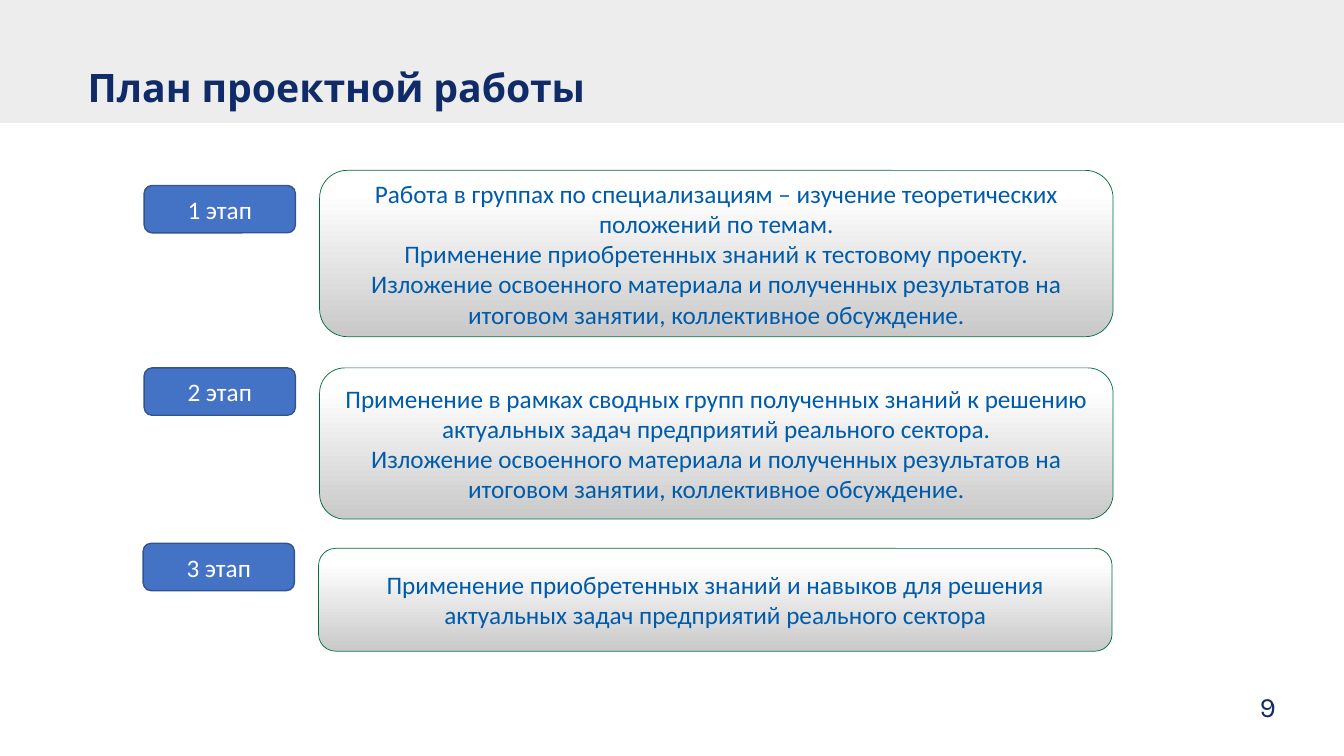
from pptx import Presentation
from pptx.dml.color import RGBColor
from pptx.enum.shapes import MSO_SHAPE
from pptx.enum.text import MSO_ANCHOR, PP_ALIGN
from pptx.util import Inches, Pt

RECT = MSO_SHAPE.RECTANGLE
ROUND = MSO_SHAPE.ROUNDED_RECTANGLE
MIDDLE = MSO_ANCHOR.MIDDLE
TOP = MSO_ANCHOR.TOP
CENTER = PP_ALIGN.CENTER
LEFT = PP_ALIGN.LEFT

WHITE = RGBColor(0xFF, 0xFF, 0xFF)
BAND = RGBColor(0xEE, 0xED, 0xED)
NAVY = RGBColor(0x0F, 0x2C, 0x68)
INDIGO = RGBColor(0x10, 0x2D, 0x69)
BLUE = RGBColor(0x44, 0x72, 0xC4)
EDGE = RGBColor(0x32, 0x54, 0x91)
GREEN = RGBColor(0x00, 0x70, 0x3C)
AZURE = RGBColor(0x00, 0x5B, 0xAA)
GRAY = RGBColor(0xC9, 0xC9, 0xC9)

TITLE = {"name": "Karla", "size": Pt(28), "bold": True}
NUMBER = {"name": "Karla", "size": Pt(20)}
BODY = {"name": "Calibri", "size": Pt(18)}
FLUSH = {"margin_left": 0, "margin_top": 0, "margin_right": 0,
         "margin_bottom": 0, "vertical_anchor": TOP, "word_wrap": True}
INNER = {"vertical_anchor": MIDDLE, "word_wrap": True}

RESULTS = ("Изложение освоенного материала и полученных результатов "
           "на итоговом занятии, коллективное обсуждение.")
STAGES = [
    (1.43, 1.84, 3.17, 1.69, 1.65, [
        "Работа в группах по специализациям – изучение теоретических положений по темам.",
        "Применение приобретенных знаний к тестовому проекту.",
        RESULTS]),
    (1.43, 3.65, 3.17, 3.65, 1.5, [
        "Применение в рамках сводных групп полученных знаний к решению "
        "актуальных задач предприятий реального сектора.",
        RESULTS]),
    (1.42, 5.39, 3.16, 5.44, 1.02, [
        "Применение приобретенных знаний и навыков для решения "
        "актуальных задач предприятий реального сектора"]),
]


def apply(target, values):
    for name, value in values.items():
        setattr(target, name, value)


def write(shape, lines, font, color, align, frame):
    text = shape.text_frame
    apply(text, frame)
    text.text = "\n".join(lines)
    for para in text.paragraphs:
        para.alignment = align
        apply(para.font, font)
        para.font.color.rgb = color


def add_text(slide, box, line, font, color, align):
    shape = slide.shapes.add_textbox(*map(Inches, box))
    write(shape, [line], font, color, align, FLUSH)


def add_box(slide, kind, box, fill=None, line=None, width=1):
    shape = slide.shapes.add_shape(kind, *map(Inches, box))
    shape.shadow.inherit = False
    if fill is not None:
        shape.fill.solid()
        shape.fill.fore_color.rgb = fill
    if line is None:
        shape.line.fill.background()
    else:
        shape.line.color.rgb = line
        shape.line.width = Pt(width)
    return shape


def add_label(slide, box, line):
    shape = add_box(slide, ROUND, box, BLUE, EDGE)
    write(shape, [line], BODY, WHITE, CENTER, INNER)


def add_card(slide, box, lines):
    shape = add_box(slide, ROUND, box, line=GREEN, width=0.5)
    shape.fill.gradient()
    shape.fill.gradient_angle = 90
    for stop, place, color in zip(shape.fill.gradient_stops, (0, 0.86), (GRAY, WHITE)):
        stop.position = place
        stop.color.rgb = color
    write(shape, lines, BODY, AZURE, CENTER, INNER)


def main():
    deck = Presentation()
    deck.slide_width = Inches(13.33)
    deck.slide_height = Inches(7.5)
    slide = deck.slides.add_slide(deck.slide_layouts[6])
    add_box(slide, RECT, (-0.02, 0, 13.35, 1.22), BAND)
    add_text(slide, (12.21, 6.84, 0.73, 0.34), "9", NUMBER, INDIGO, CENTER)
    add_text(slide, (0.87, 0.63, 11.35, 0.45), "План проектной работы", TITLE, NAVY, LEFT)
    for count, (tag_x, tag_y, card_x, card_y, height, lines) in enumerate(STAGES, 1):
        add_label(slide, (tag_x, tag_y, 1.5, 0.47), f"{count} этап")
        add_card(slide, (card_x, card_y, 7.87, height), lines)
    deck.save("out.pptx")


if __name__ == "__main__":
    main()
